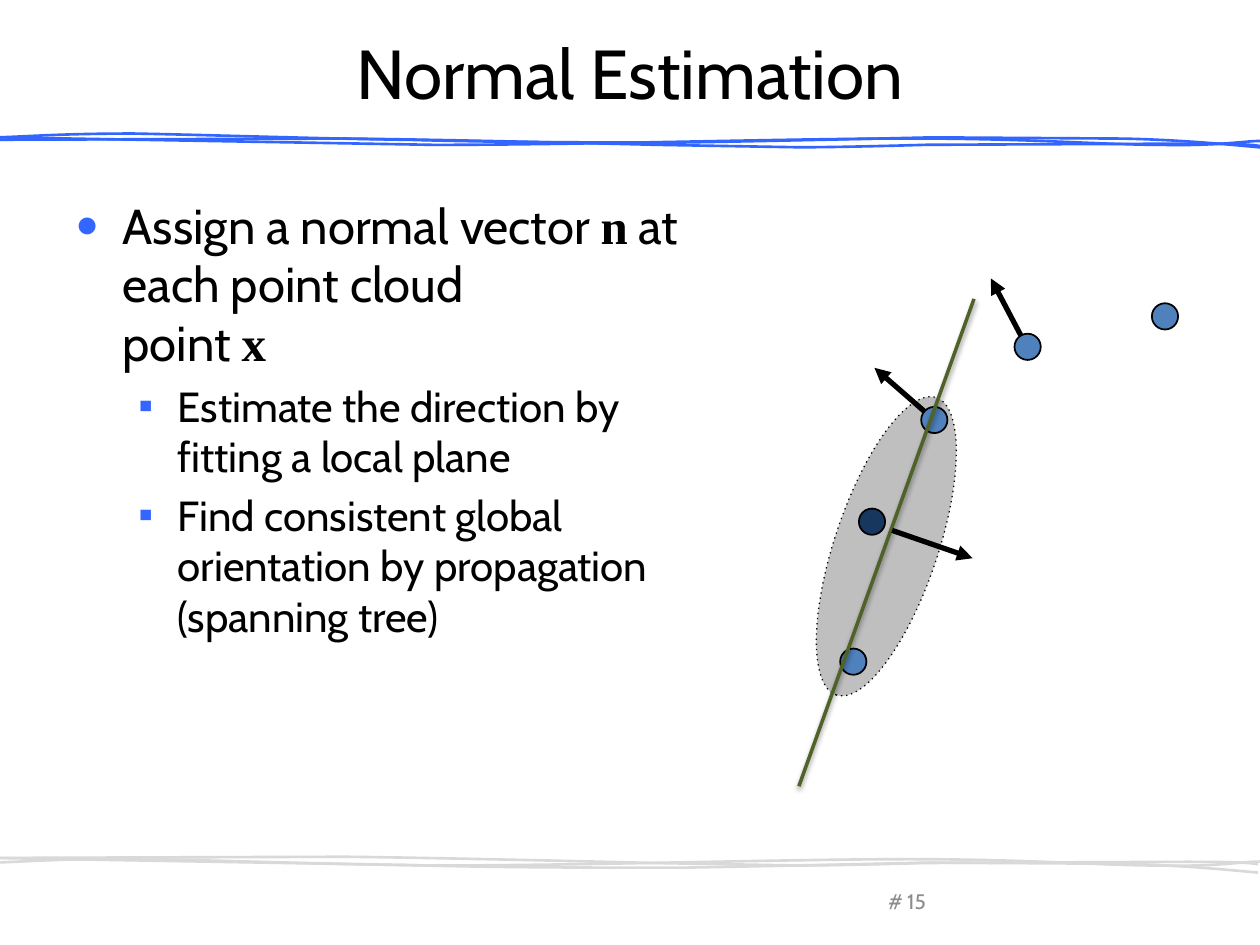
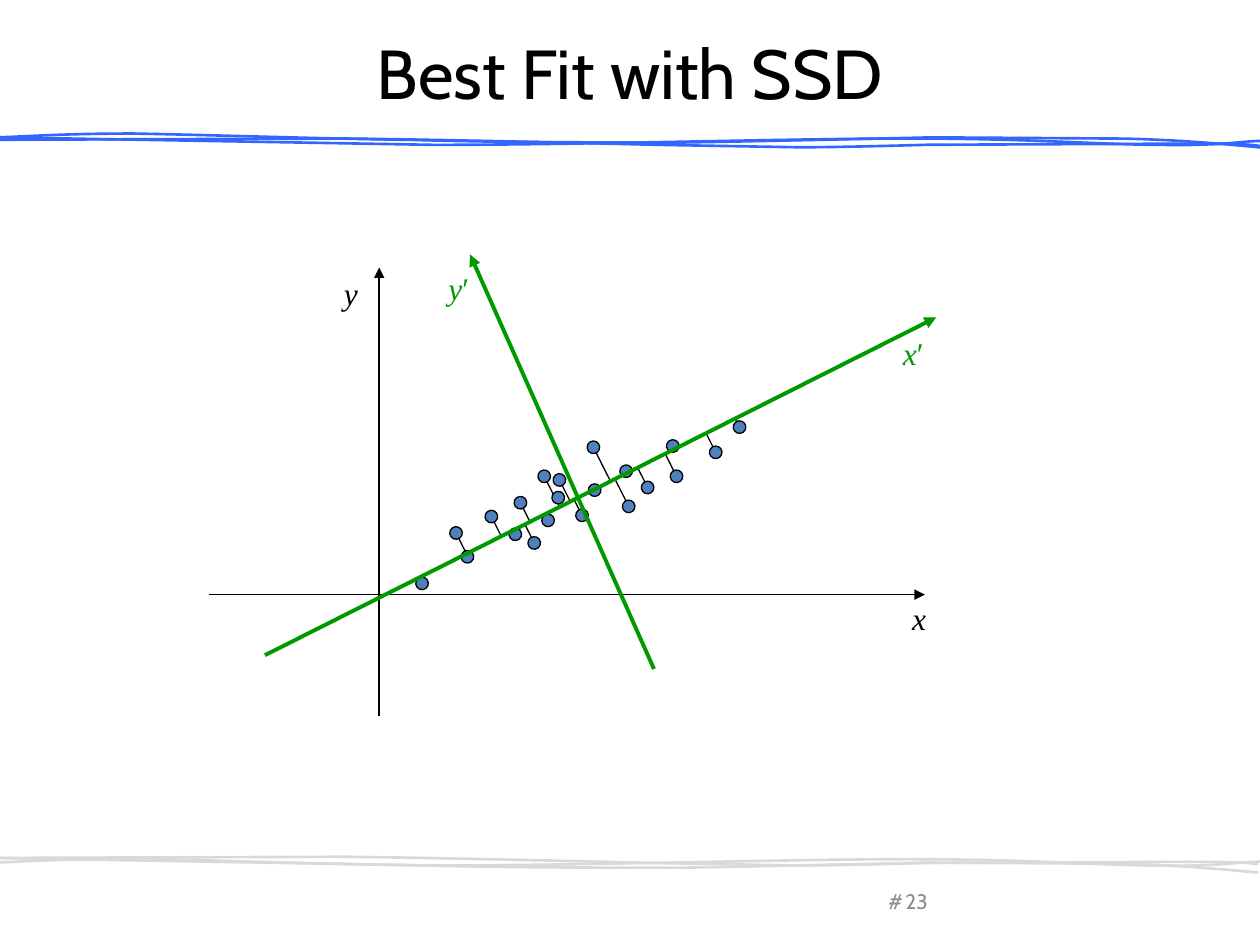
from dataclasses import dataclass
from math import hypot
from typing import Any, Optional

from lxml.etree import SubElement
from pptx import Presentation
from pptx.dml.color import RGBColor
from pptx.enum.shapes import MSO_CONNECTOR, MSO_SHAPE
from pptx.enum.text import MSO_ANCHOR, MSO_AUTO_SIZE, PP_ALIGN
from pptx.oxml.ns import qn
from pptx.util import Pt

BLACK = RGBColor(0x00, 0x00, 0x00)
ACCENT_BLUE = RGBColor(0x33, 0x66, 0xFF)
BAND_GREY = RGBColor(0xD9, 0xD9, 0xD9)
NUMBER_GREY = RGBColor(0x8C, 0x8C, 0x8C)
POINT_BLUE = RGBColor(0x4F, 0x81, 0xBD)
QUERY_NAVY = RGBColor(0x17, 0x37, 0x5E)
REGION_GREY = RGBColor(0xBF, 0xBF, 0xBF)
PLANE_GREEN = RGBColor(0x4F, 0x62, 0x28)
FIT_GREEN = RGBColor(0x00, 0x99, 0x00)

TEXT_FONT = "Cabin"
MATH_FONT = "Times New Roman"
CLOUD_DIAMETER = 15
SAMPLE_DIAMETER = 7.2
SAMPLE_TILT = 22.8
SHORTEST_RESIDUAL = 5.2

Point = tuple[float, float]


@dataclass(frozen=True)
class Stroke:
    """A hand-drawn rule; one-point steps are straight, three-point steps are Béziers."""
    start: Point
    steps: tuple[tuple[Point, ...], ...]
    footer_drop: float


@dataclass(frozen=True)
class Oval:
    """An ellipse given by its centre and size."""
    centre: Point
    width: float
    height: float
    fill: RGBColor
    line_width: float = 1
    rotation: float = 0
    dash: Optional[str] = None


@dataclass(frozen=True)
class Segment:
    """A straight line, with an arrowhead at its end if asked."""
    start: Point
    end: Point
    colour: RGBColor
    width: float
    arrow: bool = False
    shadow: bool = False


@dataclass(frozen=True)
class Piece:
    """A run of text with its own font."""
    text: str
    size: float
    font: str = TEXT_FONT
    colour: RGBColor = BLACK
    bold: bool = False
    italic: bool = False


@dataclass(frozen=True)
class Bullet:
    """The look of one outline level."""
    level: int
    sign: str
    scale: int
    margin: float
    hang: float


@dataclass(frozen=True)
class AxisLabel:
    """The name of an axis at its top left corner."""
    left: float
    top: float
    width: float
    pieces: tuple[Piece, ...]


STROKES = (
    Stroke((-0.7, 78.5), (
        ((247.7, 82.8),),
        ((334.8, 82.8), (451.4, 79.2), (520.6, 79.2)),
        ((589.7, 79.2), (630.7, 82.8), (663.8, 82.8)),
        ((697, 83.5), (710.6, 80.6), (720, 80.6)),
        ((729.4, 79.9), (724.3, 80.6), (719.3, 80.6))), 411.8),
    Stroke((-0.7, 78.5), (
        ((18.7, 77.8), (37.4, 76.3), (76.3, 76.3)),
        ((115.9, 77), (181.4, 79.2), (234, 79.9)),
        ((285.8, 81.4), (341.3, 81.4), (391, 81.4)),
        ((440.6, 80.6), (532.8, 78.5), (532.8, 78.5)),
        ((642.2, 79.2),),
        ((673.2, 79.9), (697, 82.1), (720, 84.2))), 414.4),
    Stroke((-1.4, 79.9), (
        ((198, 79.2),),
        ((260.6, 79.9), (374.4, 82.8), (374.4, 82.8)),
        ((456.5, 84.2),),
        ((482.4, 84.2), (529.2, 82.8), (529.2, 82.8)),
        ((679, 82.1),),
        ((710.6, 82.1), (715.7, 82.8), (720, 83.5))), 410.4),
)

MAIN = Bullet(0, "●", 80, 27, 27)
SUB = Bullet(1, "▪", 100, 58.5, 22.5)
OUTLINE = (
    (MAIN, (Piece("Assign a normal vector ", 28), Piece("n", 28, MATH_FONT, bold=True),
            Piece(" at each point cloud \vpoint ", 28), Piece("x", 28, MATH_FONT, bold=True))),
    (SUB, (Piece("Estimate the direction by fitting a local plane", 24),)),
    (SUB, (Piece("Find consistent global orientation by propagation (spanning tree)", 24),)),
)

NEIGHBOURHOOD = Oval((506.5, 312.2), 179.3, 59, REGION_GREY, 0.75, 288.6, "dot")
CLOUD = (
    ((533.9, 240), POINT_BLUE), ((587.2, 198.2), POINT_BLUE), ((487.6, 378.1), POINT_BLUE),
    ((665.7, 180.8), POINT_BLUE), ((498.3, 298.1), QUERY_NAVY),
)
NEIGHBOUR_NORMALS = (
    Segment((588.2, 200.9), (566.2, 159.1), BLACK, 3, arrow=True),
    Segment((537.8, 243.4), (499.7, 210.2), BLACK, 3, arrow=True),
)
LOCAL_PLANE = Segment((456.5, 449.3), (556.6, 170.8), PLANE_GREEN, 2, shadow=True)
QUERY_NORMAL = Segment((509.8, 303.1), (555.8, 319), BLACK, 3, arrow=True)

AXES = (
    Segment((216.7, 409), (216.7, 152.9), BLACK, 1, arrow=True),
    Segment((119.5, 339.8), (528.5, 339.8), BLACK, 1, arrow=True),
)
FIT_AXIS = Segment((151.4, 374.4), (535, 181.4), FIT_GREEN, 2.25, arrow=True)
FIT_NORMAL = Segment((373.7, 382.3), (268.6, 145.4), FIT_GREEN, 2.25, arrow=True)
SAMPLES = (
    (280.8, 295.2), (294.5, 305.3), (297.4, 287.3), (313.2, 297.4), (319.7, 274.3),
    (311, 272.2), (332.6, 294.5), (319, 284.4), (339.8, 280.1), (359.3, 289.4),
    (260.6, 304.6), (357.8, 269.3), (370.1, 278.6), (339.1, 255.6), (386.6, 272.2),
    (384.5, 254.9), (241.2, 333.4), (409, 258.5), (267.1, 318.2), (422.6, 244.1),
    (305.3, 310.3),
)


def axis_name(letter: str, colour: RGBColor, prime: str = "") -> tuple[Piece, ...]:
    """Return an italic letter, followed by an upright prime if given."""
    name = (Piece(letter, 18, MATH_FONT, colour, italic=True),)
    return name + ((Piece(prime, 18, MATH_FONT, colour),) if prime else ())


AXIS_LABELS = (
    AxisLabel(514.1, 338.8, 22.3, axis_name("x", BLACK)),
    AxisLabel(189.4, 152.9, 22.3, axis_name("y", BLACK)),
    AxisLabel(508.8, 187.2, 27.4, axis_name("x", FIT_GREEN, "′")),
    AxisLabel(249.1, 150, 27.4, axis_name("y", FIT_GREEN, "′")),
)


def apply_formats(target: Any, formats: dict[str, Any]) -> None:
    """Set each named attribute on the target."""
    for name, value in formats.items():
        setattr(target, name, value)


def write_pieces(paragraph: Any, pieces: tuple[Piece, ...]) -> None:
    """Add the pieces as runs, breaking lines at vertical tabs."""
    for piece in pieces:
        for index, text in enumerate(piece.text.split("\v")):
            if index:
                paragraph.add_line_break()
            run = paragraph.add_run()
            run.text = text
            apply_formats(run.font, {"name": piece.font, "size": Pt(piece.size),
                                     "bold": piece.bold, "italic": piece.italic})
            run.font.color.rgb = piece.colour


def add_text(slide: Any, box: tuple[float, ...], pieces: tuple[Piece, ...] = (),
             align: PP_ALIGN = PP_ALIGN.CENTER, **formats: Any) -> Any:
    """Add a text box and return its frame."""
    frame = slide.shapes.add_textbox(*map(Pt, box)).text_frame
    apply_formats(frame, {"word_wrap": True, "vertical_anchor": MSO_ANCHOR.MIDDLE} | formats)
    frame.paragraphs[0].alignment = align
    write_pieces(frame.paragraphs[0], pieces)
    return frame


def draw_stroke(slide: Any, stroke: Stroke, colour: RGBColor, dx: float, dy: float) -> None:
    """Draw one stroke, bending its curved steps into Béziers."""
    ends = [(Pt(x + dx), Pt(y + dy)) for x, y in (stroke.start, *(s[-1] for s in stroke.steps))]
    builder = slide.shapes.build_freeform(*ends[0])
    builder.add_line_segments(ends[1:], close=False)
    rule = builder.convert_to_shape()
    rule.shadow.inherit = False
    rule.fill.background()
    rule.line.color.rgb = colour
    rule.line.width = Pt(1.5)
    for leg, step in zip(list(rule._element.iter(qn("a:lnTo"))), stroke.steps):
        if len(step) == 3:
            leg.tag = qn("a:cubicBezTo")
            for index, (x, y) in enumerate(step[:2]):
                control = SubElement(leg, qn("a:pt"), x=str(Pt(x + dx) - rule.left),
                                     y=str(Pt(y + dy) - rule.top))
                leg.insert(index, control)


def draw_band(slide: Any, colour: RGBColor, footer: bool) -> None:
    """Draw the three strokes under the title or above the footer."""
    for stroke in STROKES:
        dx, dy = (-1.2, stroke.footer_drop) if footer else (0, 0)
        draw_stroke(slide, stroke, colour, dx, dy)


def draw_oval(slide: Any, oval: Oval) -> None:
    """Draw a filled ellipse with a black outline."""
    (x, y), width, height = oval.centre, oval.width, oval.height
    shape = slide.shapes.add_shape(MSO_SHAPE.OVAL, Pt(x - width / 2), Pt(y - height / 2),
                                   Pt(width), Pt(height))
    shape.shadow.inherit = False
    shape.rotation = oval.rotation
    shape.fill.solid()
    shape.fill.fore_color.rgb = oval.fill
    shape.line.color.rgb = BLACK
    shape.line.width = Pt(oval.line_width)
    if oval.dash:
        SubElement(shape._element.spPr.find(qn("a:ln")), qn("a:prstDash"), val=oval.dash)


def draw_segment(slide: Any, segment: Segment) -> None:
    """Draw a straight connector."""
    connector = slide.shapes.add_connector(MSO_CONNECTOR.STRAIGHT,
                                           *map(Pt, segment.start + segment.end))
    connector.line.color.rgb = segment.colour
    connector.line.width = Pt(segment.width)
    properties = connector._element.spPr
    if segment.arrow:
        SubElement(properties.find(qn("a:ln")), qn("a:tailEnd"), type="triangle")
    effects = SubElement(properties, qn("a:effectLst"))
    if segment.shadow:
        cast = SubElement(effects, qn("a:outerShdw"), blurRad=str(Pt(3.1)), dist=str(Pt(1.6)),
                          dir="5400000", rotWithShape="0")
        colour = SubElement(cast, qn("a:srgbClr"), val=str(BLACK))
        SubElement(colour, qn("a:alpha"), val="38000")


def draw_outline(slide: Any) -> None:
    """Write the bulleted outline on the left."""
    frame = add_text(slide, (36, 108, 367.2, 360), align=PP_ALIGN.LEFT,
                     vertical_anchor=MSO_ANCHOR.TOP)
    for index, (bullet, pieces) in enumerate(OUTLINE):
        paragraph = frame.add_paragraph() if index else frame.paragraphs[0]
        apply_formats(paragraph, {"level": bullet.level,
                                  "space_before": Pt(4.8 if index else 0)})
        properties = paragraph._p.get_or_add_pPr()
        properties.set("marL", str(Pt(bullet.margin)))
        properties.set("indent", str(-Pt(bullet.hang)))
        colour = SubElement(properties, qn("a:buClr"))
        SubElement(colour, qn("a:srgbClr"), val=str(ACCENT_BLUE))
        SubElement(properties, qn("a:buSzPct"), val=str(bullet.scale * 1000))
        SubElement(properties, qn("a:buFont"), typeface=MATH_FONT)
        SubElement(properties, qn("a:buChar"), char=bullet.sign)
        write_pieces(paragraph, pieces)


def residual(sample: Point, axis: Segment) -> Segment:
    """Return the perpendicular from a sample to the fitted axis."""
    (x0, y0), (x1, y1) = axis.start, axis.end
    dx, dy = x1 - x0, y1 - y0
    t = ((sample[0] - x0) * dx + (sample[1] - y0) * dy) / (dx * dx + dy * dy)
    return Segment(sample, (x0 + t * dx, y0 + t * dy), BLACK, 0.75)


def start_slide(deck: Any, title: str, number: int) -> Any:
    """Add a slide with the shared bands, title and number."""
    slide = deck.slides.add_slide(deck.slide_layouts[6])
    draw_band(slide, ACCENT_BLUE, footer=False)
    draw_band(slide, BAND_GREY, footer=True)
    add_text(slide, (36, 22, 648, 38.2), (Piece(title, 39.6),))
    add_text(slide, (500.4, 504, 21.6, 21.6), (Piece("#", 12, colour=NUMBER_GREY),))
    add_text(slide, (500.4, 500.4, 46.8, 28.8), (Piece(str(number), 12, colour=NUMBER_GREY),))
    return slide


def build_normal_estimation(deck: Any) -> None:
    """Build the slide on normals of a point cloud."""
    slide = start_slide(deck, "Normal Estimation", 15)
    draw_oval(slide, NEIGHBOURHOOD)
    for normal in NEIGHBOUR_NORMALS:
        draw_segment(slide, normal)
    draw_outline(slide)
    for centre, fill in CLOUD:
        draw_oval(slide, Oval(centre, CLOUD_DIAMETER, CLOUD_DIAMETER, fill))
    draw_segment(slide, LOCAL_PLANE)
    draw_segment(slide, QUERY_NORMAL)


def build_best_fit(deck: Any) -> None:
    """Build the slide on the least-squares axis."""
    slide = start_slide(deck, "Best Fit with SSD", 23)
    for line in (residual(sample, FIT_AXIS) for sample in SAMPLES):
        if hypot(line.end[0] - line.start[0], line.end[1] - line.start[1]) > SHORTEST_RESIDUAL:
            draw_segment(slide, line)
    for axis in AXES:
        draw_segment(slide, axis)
    for sample in SAMPLES:
        draw_oval(slide, Oval(sample, SAMPLE_DIAMETER, SAMPLE_DIAMETER, POINT_BLUE, 0.75,
                              SAMPLE_TILT))
    for axis in (FIT_AXIS, FIT_NORMAL):
        draw_segment(slide, axis)
    for label in AXIS_LABELS:
        add_text(slide, (label.left, label.top, label.width, 28.8), label.pieces, PP_ALIGN.LEFT,
                 word_wrap=False, vertical_anchor=MSO_ANCHOR.TOP,
                 auto_size=MSO_AUTO_SIZE.SHAPE_TO_FIT_TEXT)


def main() -> None:
    """Build and save the deck."""
    deck = Presentation()
    apply_formats(deck, {"slide_width": Pt(720), "slide_height": Pt(540)})
    build_normal_estimation(deck)
    build_best_fit(deck)
    deck.save("out.pptx")


if __name__ == "__main__":
    main()
